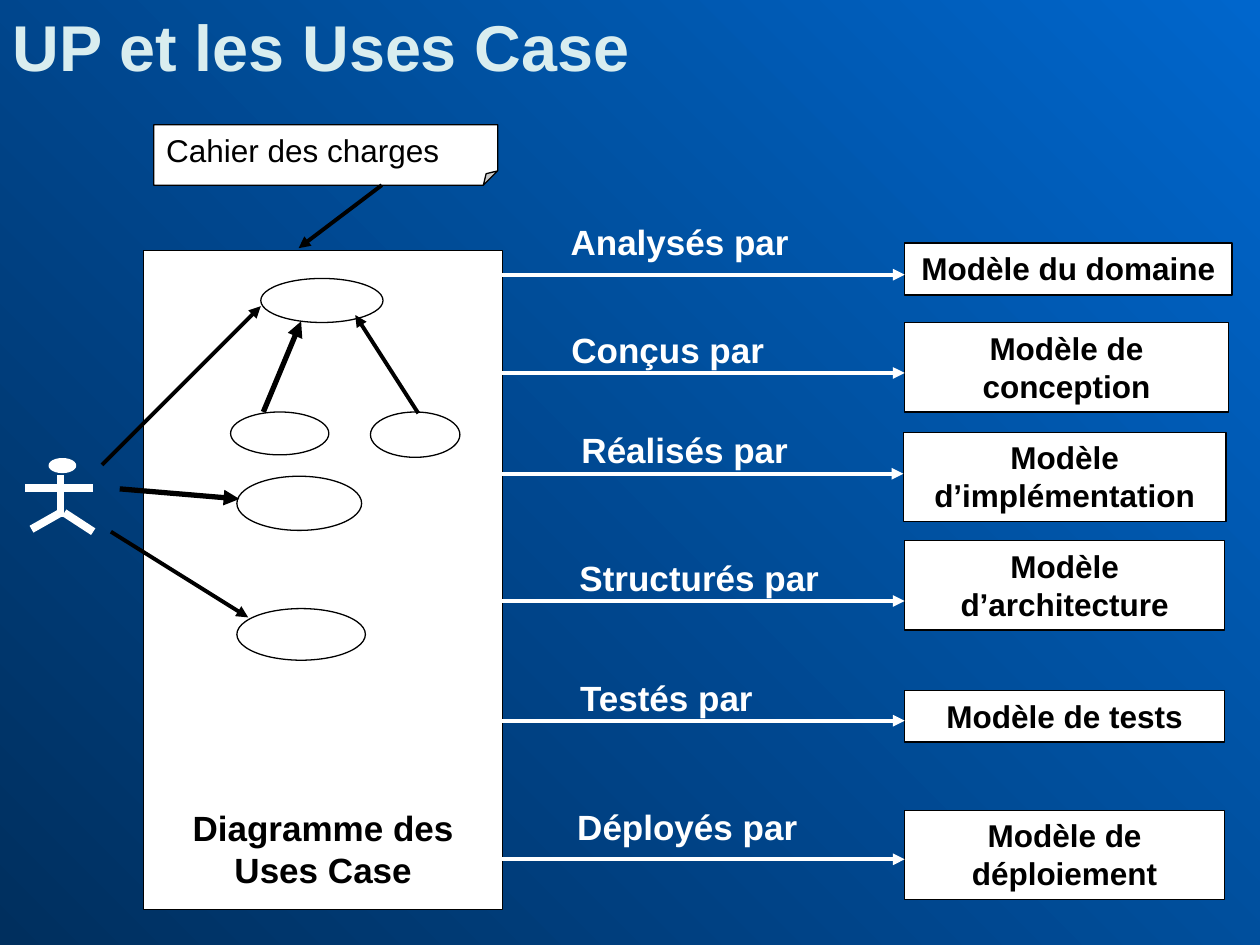
from lxml import etree
from pptx import Presentation
from pptx.dml.color import RGBColor
from pptx.enum import shapes, text
from pptx.oxml.ns import qn
from pptx.util import Inches, Pt

WHITE, BLACK = "FFFFFF", "000000"
color = RGBColor.from_string

deck = Presentation()
deck.slide_width, deck.slide_height = Inches(10), Inches(7.5)
page = deck.slides.add_slide(deck.slide_layouts[5])


def add_box(kind, place, words="", size=18, ink=BLACK, bold=True, outline=BLACK, weight=0.75):
    """Add a white shape, or a bare text box when kind is None."""
    place = [Inches(length) for length in place]
    if kind is None:
        box = page.shapes.add_textbox(*place)
    else:
        box = page.shapes.add_shape(kind, *place)
        box.shadow.inherit = False
        box.fill.solid()
        box.fill.fore_color.rgb = color(WHITE)
        box.line.color.rgb = color(outline)
        box.line.width = Pt(weight)
    if words:
        frame = box.text_frame
        frame.word_wrap = True
        frame.vertical_anchor = text.MSO_ANCHOR.TOP
        para = frame.paragraphs[0]
        para.text = words
        para.alignment = text.PP_ALIGN.CENTER
        para.font.name, para.font.size, para.font.bold = "Arial", Pt(size), bold
        para.font.color.rgb = color(ink)
    return box


def add_line(start, end, ink=BLACK, weight=2.25, arrow=True):
    points = [Inches(length) for length in (*start, *end)]
    line = page.shapes.add_connector(shapes.MSO_CONNECTOR.STRAIGHT, *points)
    line.line.color.rgb = color(ink)
    line.line.width = Pt(weight)
    if arrow:
        outline = line._element.spPr.find(qn("a:ln"))
        etree.SubElement(outline, qn("a:tailEnd"), type="triangle")
    etree.SubElement(line._element.spPr, qn("a:effectLst"))


# Background: dark at bottom left, light at top right
backdrop = page.background.fill
backdrop.gradient()
backdrop.gradient_angle = 45
for stop, shade in zip(backdrop.gradient_stops, ("002F5E", "0066CC")):
    stop.color.rgb = color(shade)

# Title
title = page.shapes.title
title.left, title.top, title.width, title.height = Inches(0), Inches(0), Inches(10), Inches(0.72)
title.text_frame.text = "UP et les Uses Case"
title.text_frame.vertical_anchor = text.MSO_ANCHOR.TOP
title.text_frame.auto_size = text.MSO_AUTO_SIZE.NONE
heading = title.text_frame.paragraphs[0]
heading.alignment = text.PP_ALIGN.LEFT
heading.font.name, heading.font.size, heading.font.bold = "Arial", Pt(37), True
heading.font.color.rgb = color("D9EDEF")

# Use case diagram with its caption
add_box(shapes.MSO_SHAPE.RECTANGLE, (1.14, 1.99, 2.85, 5.23))
add_box(None, (1.22, 6.35, 2.69, 0.77), "Diagramme des Uses Case", 20)
use_cases = [
    (2.07, 2.21, 0.97, 0.35),
    (1.83, 3.27, 0.78, 0.34),
    (2.94, 3.27, 0.71, 0.36),
    (1.88, 3.78, 0.99, 0.43),
    (1.88, 4.83, 1.02, 0.41),
]
for place in use_cases:
    add_box(shapes.MSO_SHAPE.OVAL, place)

# Requirements note, with the size of its folded corner
note = add_box(shapes.MSO_SHAPE.FOLDED_CORNER, (1.22, 0.99, 2.73, 0.48),
               "Cahier des charges", bold=False)
note.text_frame.paragraphs[0].alignment = text.PP_ALIGN.LEFT
guides = note._element.spPr.find(qn("a:prstGeom")).get_or_add_avLst()
etree.SubElement(guides, qn("a:gd"), name="adj", fmla="val 23700")

# Actor: head, body, arms, legs
add_box(shapes.MSO_SHAPE.OVAL, (0.39, 3.64, 0.21, 0.11), outline=WHITE)
limbs = [
    ((0.48, 3.77), (0.48, 4.1)),
    ((0.2, 3.87), (0.74, 3.87)),
    ((0.48, 4.07), (0.25, 4.2)),
    ((0.51, 4.07), (0.74, 4.22)),
]
for start, end in limbs:
    add_line(start, end, WHITE, 4.5, arrow=False)

# Black arrows: note to diagram, between use cases, actor to use cases
black_arrows = [
    ((3.03, 1.47), (2.37, 1.97), 2.25),
    ((2.09, 3.27), (2.39, 2.55), 3),
    ((3.32, 3.28), (2.82, 2.5), 2.25),
    ((0.81, 3.69), (2.07, 2.43), 2.25),
    ((0.95, 3.88), (1.9, 3.96), 3),
    ((0.88, 4.22), (1.97, 4.9), 2.25),
]
for start, end, weight in black_arrows:
    add_line(start, end, weight=weight)

# Rows: relation, its left, top and width; arrow height; model, its place and border
rows = [
    ("Analysés par", 4.31, 1.7, 2.17, 2.18, "Modèle du domaine", (7.18, 1.93, 2.6, 0.41), 1),
    ("Conçus par", 4.41, 2.56, 1.78, 2.96, "Modèle de conception", (7.18, 2.56, 2.57, 0.71), 0.75),
    ("Réalisés par", 4.26, 3.35, 2.35, 3.76, "Modèle d’implémentation", (7.17, 3.43, 2.56, 0.71), 0.75),
    ("Structurés par", 4.41, 4.37, 2.28, 4.77, "Modèle d’architecture", (7.18, 4.29, 2.54, 0.71), 0.75),
    ("Testés par", 4.41, 5.32, 1.76, 5.72, "Modèle de tests", (7.18, 5.48, 2.54, 0.41), 0.75),
    ("Déployés par", 4.46, 6.34, 1.99, 6.82, "Modèle de déploiement", (7.18, 6.43, 2.54, 0.71), 0.75),
]
for relation, left, top, width, height, model, place, border in rows:
    add_box(shapes.MSO_SHAPE.RECTANGLE, place, model, weight=border)
    add_line((3.98, height), (place[0], height), WHITE)
    add_box(None, (left, top, width, 0.43), relation, 20, WHITE)

deck.save("out.pptx")
